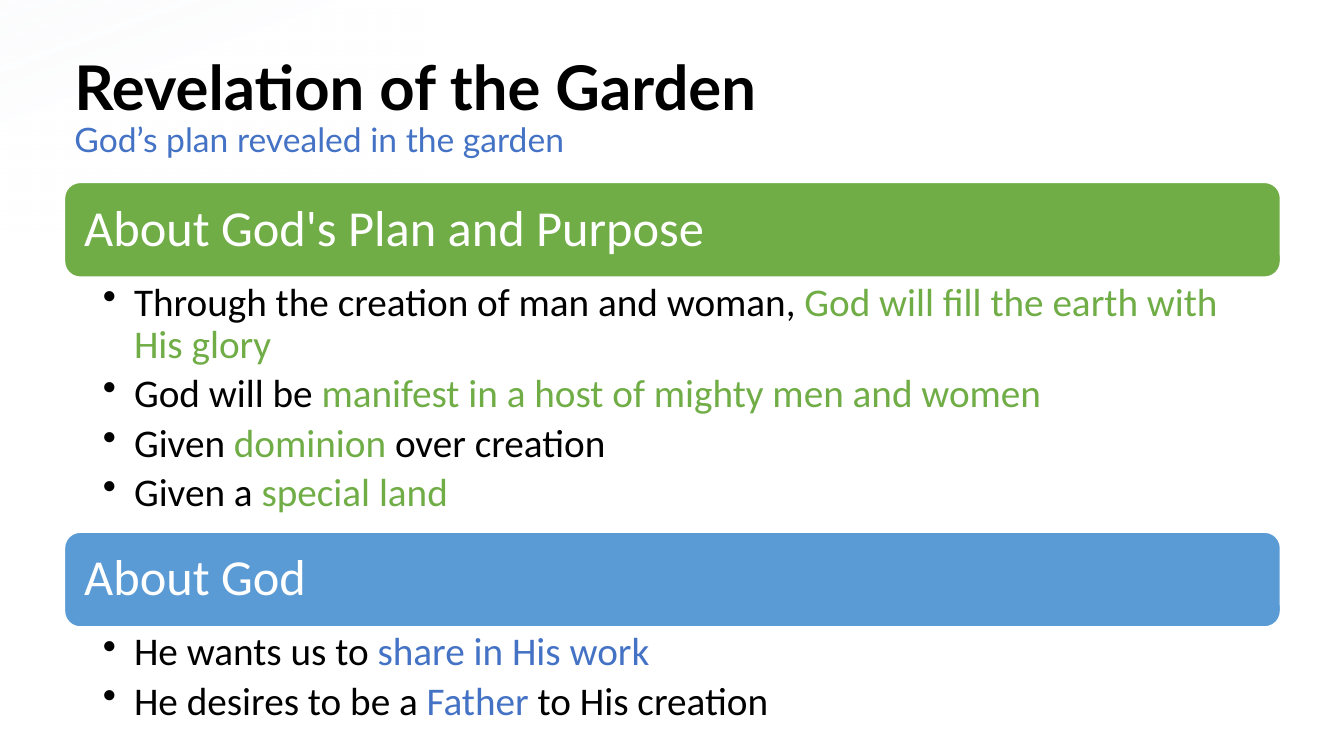
from lxml import etree
from pptx import Presentation
from pptx.dml.color import RGBColor
from pptx.enum.shapes import MSO_SHAPE
from pptx.enum.text import MSO_ANCHOR, PP_ALIGN
from pptx.oxml import parse_xml
from pptx.oxml.ns import nsdecls, qn
from pptx.util import Inches, Pt

RECT, ROUND = MSO_SHAPE.RECTANGLE, MSO_SHAPE.ROUNDED_RECTANGLE
MID, TOP, LEFT = MSO_ANCHOR.MIDDLE, MSO_ANCHOR.TOP, PP_ALIGN.LEFT

TITLE = "Revelation of the Garden"
SUB = "God’s plan revealed in the garden"
PARTS = [
    {"head": "About God's Plan and Purpose", "fill": "green", "mark": "green", "rows": 2.53,
     "list": [
         ["Through the creation of man and woman, ", "God will fill the earth with His glory"],
         ["God will be ", "manifest in a host of mighty men and women"],
         ["Given ", "dominion", " over creation"],
         ["Given a ", "special land"]]},
    {"head": "About God", "fill": "sky", "mark": "blue", "rows": 1.06,
     "list": [
         ["He wants us to ", "share in His work"],
         ["He desires to be a ", "Father", " to His creation"]]},
]
THEME = {
    "color": {"black": "000000", "white": "FFFFFF", "green": "70AD47",
              "sky": "5B9BD5", "blue": "4472C4"},
    "title": {"name": "Lato", "size": Pt(44), "bold": True},
    "sub": {"name": "Lato", "size": Pt(24), "bold": False},
    "head": {"name": "Calibri", "size": Pt(36)},
    "list": {"name": "Calibri", "size": Pt(28)},
    "glow": [(0, "F6F8FC", 25), (34, "FFFFFF", 70), (53, "FFFFFF", 85), (67, "FFFFFF", 100)],
}
WIDE, HIGH = 13.33, 7.5
EDGE, SPAN = 0.64, 12.06
START, BAR = 1.81, 0.94
HANG = Inches(0.31)


def rgb(key):
    return RGBColor.from_string(THEME["color"][key])


def put(obj, **vals):
    for key, val in vals.items():
        setattr(obj, key, val)


def frame(shape, anchor, left, right, edge):
    text = shape.text_frame
    put(text, word_wrap=True, vertical_anchor=anchor,
        margin_left=Inches(left), margin_right=Inches(right),
        margin_top=Inches(edge), margin_bottom=Inches(edge))
    return text


def write(para, text, style, color):
    run = para.add_run()
    run.text = text
    put(run.font, **THEME[style])
    run.font.color.rgb = rgb(color)


def area(top, high):
    return [Inches(v) for v in (EDGE, top, SPAN, high)]


def glow(slide):
    shape = slide.shapes.add_shape(RECT, 0, 0, Inches(4.2), Inches(2.37))
    shape.shadow.inherit = False
    shape.line.fill.background()
    stops = "".join(
        f'<a:gs pos="{pos * 1000}"><a:srgbClr val="{color}">'
        f'<a:alpha val="{alpha * 1000}"/></a:srgbClr></a:gs>'
        for pos, color, alpha in THEME["glow"])
    grad = parse_xml(f'<a:gradFill {nsdecls("a")}><a:gsLst>{stops}</a:gsLst>'
                     f'<a:lin ang="{70 * 60000}" scaled="0"/></a:gradFill>')
    shape._element.spPr.find(qn("a:prstGeom")).addnext(grad)


def title(slide):
    text = frame(slide.shapes.add_textbox(*area(0.35, 1.45)), MID, 0.1, 0.1, 0.05)
    para = text.paragraphs[0]
    para.line_spacing = 0.9
    write(para, TITLE, "title", "black")
    para.add_line_break()
    write(para, SUB, "sub", "blue")


def bar(slide, part, top):
    shape = slide.shapes.add_shape(ROUND, *area(top, BAR))
    shape.shadow.inherit = False
    shape.fill.solid()
    shape.fill.fore_color.rgb = rgb(part["fill"])
    shape.line.color.rgb = rgb("white")
    shape.line.width = Pt(1)
    para = frame(shape, MID, 0.15, 0.15, 0.15).paragraphs[0]
    put(para, alignment=LEFT, line_spacing=0.9)
    write(para, part["head"], "head", "white")


def points(slide, part, top):
    box = slide.shapes.add_textbox(*area(top, part["rows"]))
    text = frame(box, TOP, 0.38, 0.28, 0.05)
    for row, item in enumerate(part["list"]):
        para = text.add_paragraph() if row else text.paragraphs[0]
        props = para._p.get_or_add_pPr()
        props.set("marL", str(HANG))
        props.set("indent", str(-HANG))
        etree.SubElement(props, qn("a:buChar"), char="•")
        put(para, level=1, line_spacing=0.9, space_after=Pt(5))
        for spot, words in enumerate(item):
            write(para, words, "list", part["mark"] if spot % 2 else "black")


def main():
    deck = Presentation()
    put(deck, slide_width=Inches(WIDE), slide_height=Inches(HIGH))
    slide = deck.slides.add_slide(deck.slide_layouts[6])
    glow(slide)
    title(slide)
    top = START
    for part in PARTS:
        bar(slide, part, top)
        points(slide, part, top + BAR)
        top += BAR + part["rows"]
    deck.save("out.pptx")


if __name__ == "__main__":
    main()
